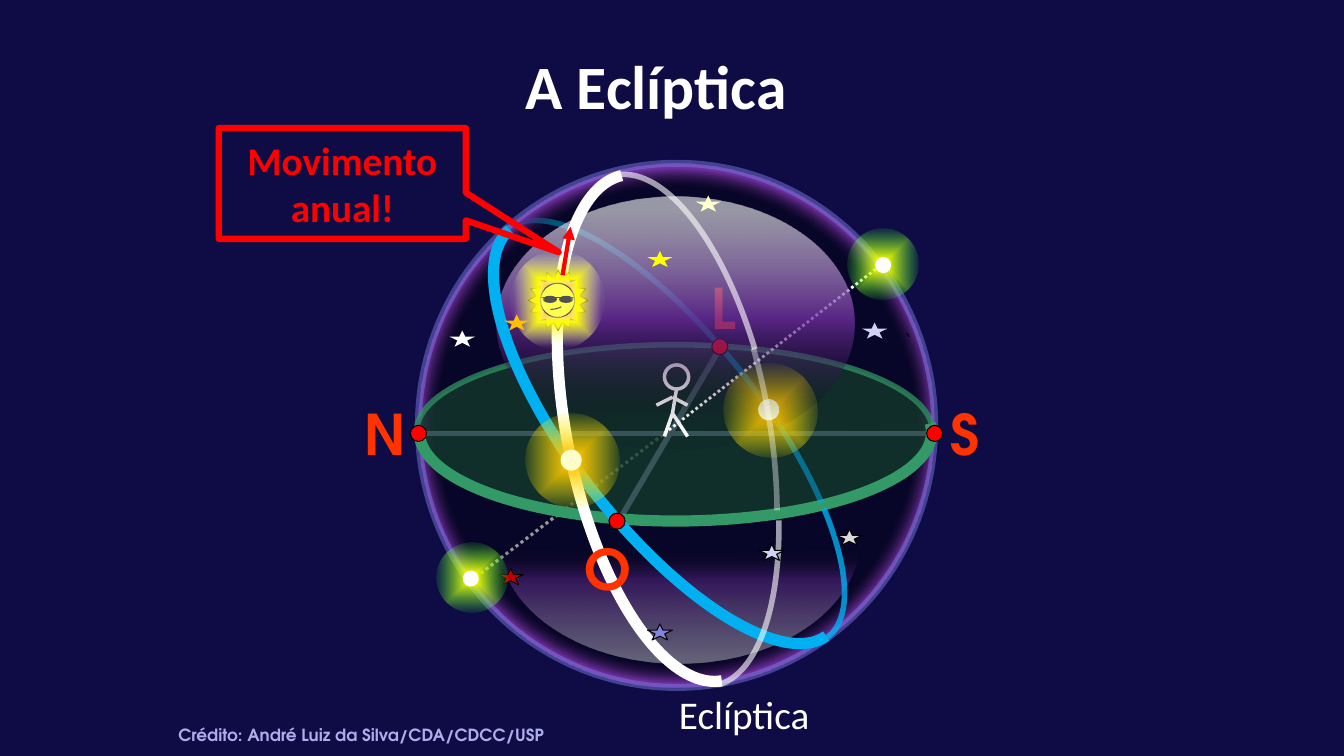
import pptx
import pptx.dml.color
import pptx.enum.shapes
import pptx.enum.text
import pptx.oxml
import pptx.oxml.ns
import pptx.util

EMU_PER_PX = 9144
KIND = pptx.enum.shapes.MSO_SHAPE
ANCHOR = pptx.enum.text.MSO_ANCHOR
ALIGN = pptx.enum.text.PP_ALIGN
COLORS = {
    "night": "0F0B45", "white": "FFFFFF", "black": "000000", "purple": "7030A0",
    "rim": "7878DE", "axis": "A5A5E9", "forest": "143C2B", "horizon": "339966",
    "letter": "FF3300", "equator": "00B0F0", "red": "FF0000", "gold": "FFC000",
    "yellow": "FFFF00", "cream": "FFFFCC", "green": "21FF46", "lilac": "D2D2F4",
    "crimson": "C00000", "violet": "8585E0", "silver": "D9D9D9", "credit": "ADADEB",
}
ADVENTOR = "TeX Gyre Adventor"
SPHERE_STOPS = [(65, "black", 40), (70, "purple", 100)]
EQUINOX_STOPS = [(7, "gold", 100), (79, "yellow", 0)]
POLE_STOPS = [(7, "yellow", 100), (77, "green", 2)]
SUN_STOPS = [(27, "white", 32), (40, "yellow", 100), (93, "cream", 4)]
MOON_STOPS = [(3, "white", 37), (68, "purple", 41), (94, "black", 0)]
DOME_STOPS = [(6, "white", 58), (48, "purple", 77), (91, "black", 2)]


def px(value):
    return pptx.util.Emu(value * EMU_PER_PX)


def rgb(color):
    return pptx.dml.color.RGBColor.from_string(COLORS[color])


def add_child(parent, tag, **attributes):
    child = pptx.oxml.parse_xml(f"<{tag} {pptx.oxml.ns.nsdecls('a')}/>")
    for name, value in attributes.items():
        child.set(name, str(value))
    parent.append(child)
    return child


def paint(fill, owner, color, opacity=100):
    fill.solid()
    fill.fore_color.rgb = rgb(color)
    if opacity < 100:
        solid = owner.find(pptx.oxml.ns.qn("a:solidFill"))
        add_child(solid[0], "a:alpha", val=opacity * 1000)


def set_line(item, color, width, opacity=100):
    if color is None:
        item.line.fill.background()
        return
    item.line.width = pptx.util.Pt(width)
    outline = item.line.fill
    outline.solid()
    paint(outline, item._element.spPr.find(pptx.oxml.ns.qn("a:ln")), color, opacity)


def set_gradient(shape, stops, angle=None, route="shape"):
    shape.fill.background()
    properties = shape._element.spPr
    empty_fill = properties.find(pptx.oxml.ns.qn("a:noFill"))
    gradient = add_child(properties, "a:gradFill", rotWithShape=1)
    stop_list = add_child(gradient, "a:gsLst")
    for position, color, opacity in stops:
        stop = add_child(stop_list, "a:gs", pos=position * 1000)
        value = add_child(stop, "a:srgbClr", val=COLORS[color])
        add_child(value, "a:alpha", val=opacity * 1000)
    if angle is None:
        center = add_child(gradient, "a:path", path=route)
        add_child(center, "a:fillToRect", l=50000, t=50000, r=50000, b=50000)
    else:
        add_child(gradient, "a:lin", ang=angle * 60000, scaled=0)
    properties.replace(empty_fill, gradient)


def add_shape(slide, kind, box, fill=None, fill_opacity=100, line=None, width=0.75,
              line_opacity=100, rotation=0, adjustments=()):
    shape = slide.shapes.add_shape(kind, *map(px, box))
    shape.shadow.inherit = False
    shape.rotation = rotation
    for index, value in enumerate(adjustments):
        shape.adjustments[index] = value
    if fill is None:
        shape.fill.background()
    else:
        paint(shape.fill, shape._element.spPr, fill, fill_opacity)
    set_line(shape, line, width, line_opacity)
    return shape


def add_arc(slide, box, start, end, **style):
    return add_shape(slide, KIND.ARC, box, adjustments=(start * 0.6, end * 0.6), **style)


def add_line(slide, start, end, color, width, dotted=False, arrow=False):
    connector = slide.shapes.add_connector(
        pptx.enum.shapes.MSO_CONNECTOR.STRAIGHT, *map(px, start + end))
    set_line(connector, color, width)
    if dotted:
        connector.line.dash_style = pptx.enum.dml.MSO_LINE.ROUND_DOT
    if arrow:
        add_child(connector.line._get_or_add_ln(), "a:tailEnd", type="triangle")
    add_child(connector._element.spPr, "a:effectLst")


def write_text(shape, text, size=28, font="Calibri", color="white", bold=False,
               align=ALIGN.LEFT, anchor=ANCHOR.TOP):
    frame = shape.text_frame
    frame.word_wrap = True
    frame.vertical_anchor = anchor
    paragraph = frame.paragraphs[0]
    paragraph.alignment = align
    run = paragraph.add_run()
    run.text = text
    run.font.size = pptx.util.Pt(size)
    run.font.name = font
    run.font.bold = bold
    run.font.color.rgb = rgb(color)


def add_text(slide, text, box, **style):
    write_text(slide.shapes.add_textbox(*map(px, box)), text, **style)


def add_letter(slide, letter, left, top):
    add_text(slide, letter, (left, top, 39, 77), size=40, font=ADVENTOR,
             color="letter", bold=True)


def add_dot(slide, left, top):
    add_shape(slide, KIND.OVAL, (left, top, 16, 16), fill="red", line="black")


def add_glow(slide, box, stops, core, core_color):
    set_gradient(add_shape(slide, KIND.OVAL, box, rotation=305.7), stops)
    add_shape(slide, KIND.OVAL, core, fill=core_color, rotation=305.7)


def add_observer(slide):
    add_shape(slide, KIND.OVAL, (659, 362, 24, 24), line="white", width=2.5)
    neck, hip, shoulder = (671, 386), (667, 410), (667, 394)
    for start, end in ((neck, hip), (hip, (682, 433)), (hip, (659, 433)),
                       (shoulder, (682, 402)), ((651, 402), shoulder)):
        add_line(slide, start, end, "white", 2.5)


def add_sun(slide):
    add_shape(slide, KIND.STAR_16_POINT, (524, 268, 59, 60), fill="gold", line="black")
    add_shape(slide, KIND.OVAL, (536, 281, 34, 34), fill="yellow", line="black")
    add_arc(slide, (530, 287, 32, 20), 35, 90, line="black")
    for left in (539, 555):
        add_shape(slide, KIND.OVAL, (left, 294, 13, 6), fill="black", line="black")
    add_line(slide, (536, 295), (570, 295), "black", 0.75)
    set_gradient(add_shape(slide, KIND.OVAL, (506, 249, 94, 98)), SUN_STOPS)


def add_sphere(slide):
    add_arc(slide, (566, 173, 190, 511), 90, 157.9, rotation=142.1,
            line="equator", width=4, line_opacity=80)
    add_line(slide, (462, 580), (659, 430), "white", 2.25, dotted=True)
    sphere = add_shape(slide, KIND.OVAL, (415, 162, 512, 520), line="rim", width=5,
                       line_opacity=50)
    set_gradient(sphere, SPHERE_STOPS, route="circle")
    add_line(slide, (613, 518), (715, 344), "axis", 4)
    add_line(slide, (415, 430), (927, 430), "axis", 4)
    add_shape(slide, KIND.OVAL, (413, 342, 512, 173), fill="forest", fill_opacity=73,
              line="horizon", width=4, line_opacity=70)
    for letter, left, top in (("N", 352, 391), ("L", 696, 266), ("S", 933, 391)):
        add_letter(slide, letter, left, top)
    add_line(slide, (902, 334), (899, 330), "black", 0.75)
    add_arc(slide, (416, 341, 508, 176), 358, 180, fill="forest", fill_opacity=7,
            line="horizon", width=8)
    add_line(slide, (659, 430), (871, 265), "white", 2, dotted=True)


def add_circles(slide):
    add_arc(slide, (570, 175, 188, 511), 243.7, 270.2, rotation=142.1,
            line="equator", width=4, line_opacity=80)
    dome = add_shape(slide, KIND.OVAL, (493, 195, 354, 252))
    set_gradient(dome, DOME_STOPS, angle=90)
    add_arc(slide, (568, 173, 191, 511), 270.3, 89.7, rotation=142.1,
            line="equator", width=8)
    add_dot(slide, 604, 509)
    for box, start, end, rotation, width, opacity in (
            ((556, 170, 207, 511), 147.5, 226, 170, 4, 38),
            ((556, 174, 207, 511), 228.7, 269.2, 168.8, 4, 60),
            ((555, 169, 210, 511), 90, 149.8, 168.8, 4, 60),
            ((562, 169, 211, 511), 270.3, 89.7, 168.8, 8, 100)):
        add_arc(slide, box, start, end, rotation=rotation, line="white", width=width,
                line_opacity=opacity)


def add_stars(slide):
    for left, top, color, outline in (
            (753, 540, "lilac", "black"), (494, 564, "crimson", "black"),
            (642, 619, "violet", "black"), (830, 525, "silver", "black"),
            (855, 320, "lilac", None), (500, 312, "gold", None),
            (446, 328, "white", None), (642, 249, "yellow", None),
            (690, 194, "cream", None)):
        add_shape(slide, KIND.STAR_5_POINT, (left, top, 25, 16), fill=color, line=outline)


def main():
    presentation = pptx.Presentation()
    presentation.slide_width, presentation.slide_height = px(1333), px(750)
    slide = presentation.slides.add_slide(presentation.slide_layouts[6])
    paint_background = slide.background.fill
    paint_background.solid()
    paint_background.fore_color.rgb = rgb("night")

    add_text(slide, "A Eclíptica", (226, 22, 850, 125), size=44, bold=True,
             align=ALIGN.CENTER, anchor=ANCHOR.MIDDLE)
    add_sphere(slide)
    add_arc(slide, (570, 175, 188, 511), 162.2, 242.4, rotation=142.1,
            line="equator", width=4, line_opacity=50)
    add_observer(slide)
    add_glow(slide, (718, 360, 92, 94), EQUINOX_STOPS, (752, 396, 21, 21), "cream")
    for left, top in ((706, 336), (407, 422), (919, 422)):
        add_dot(slide, left, top)
    moon = add_shape(slide, KIND.MOON, (612, 418, 123, 358), rotation=270,
                     adjustments=(0.875,))
    set_gradient(moon, MOON_STOPS, angle=0)
    add_text(slide, "Eclíptica", (549, 680, 378, 57), align=ALIGN.CENTER)
    add_circles(slide)
    add_sun(slide)
    add_letter(slide, "O", 570, 525)
    add_line(slide, (558, 273), (566, 225), "red", 3, arrow=True)
    callout = add_shape(slide, KIND.RECTANGULAR_CALLOUT, (217, 127, 245, 110),
                        line="red", width=4.5, adjustments=(0.876, 0.62))
    write_text(callout, "Movimento anual!", color="red", bold=True,
               align=ALIGN.CENTER, anchor=ANCHOR.MIDDLE)
    add_stars(slide)
    add_text(slide, "Crédito: André Luiz da Silva/CDA/CDCC/USP", (167, 714, 1028, 30),
             size=12, font=ADVENTOR, color="credit", bold=True)
    add_glow(slide, (433, 538, 70, 70), POLE_STOPS, (459, 566, 16, 16), "white")
    add_glow(slide, (841, 227, 70, 70), POLE_STOPS, (868, 255, 16, 16), "white")
    add_glow(slide, (522, 410, 92, 94), EQUINOX_STOPS, (556, 446, 21, 21), "cream")
    presentation.save("out.pptx")


if __name__ == "__main__":
    main()
